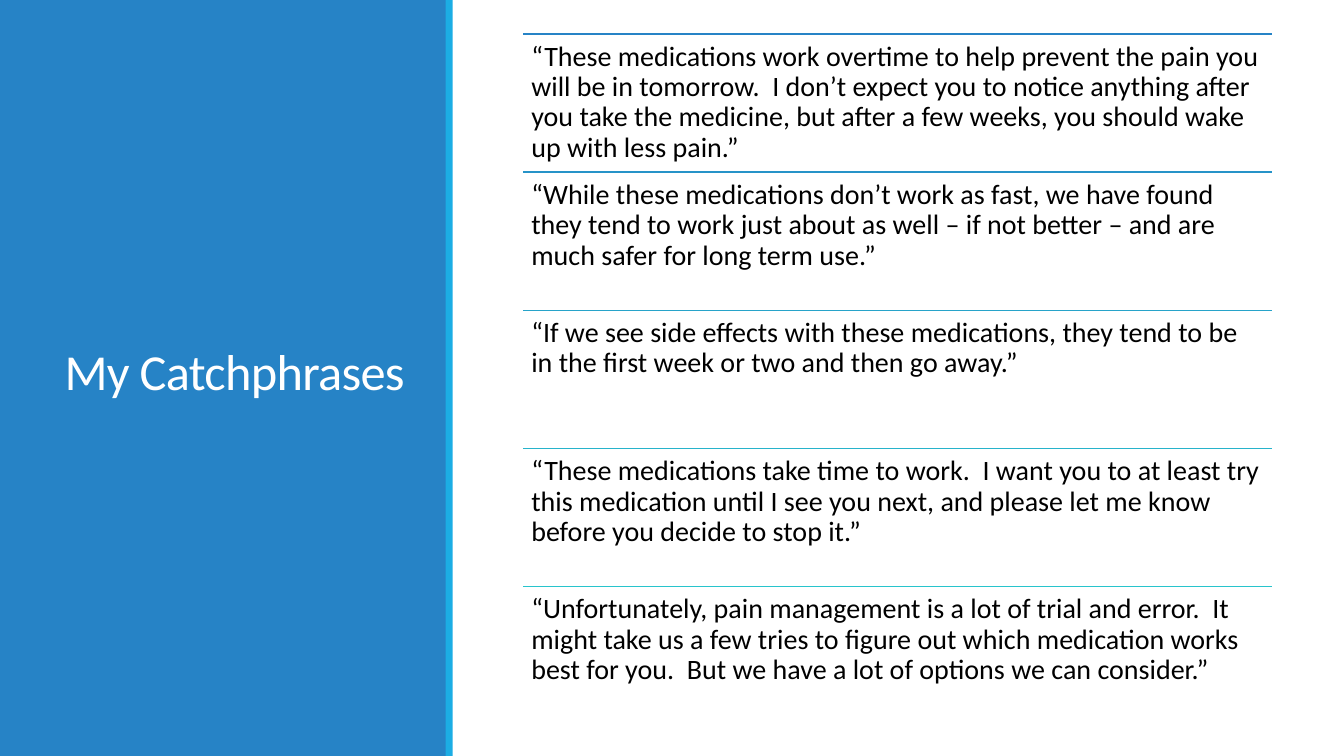
"""Build the "My Catchphrases" slide."""
from lxml.etree import SubElement
from pptx import Presentation
from pptx.dml.color import RGBColor
from pptx.enum.shapes import MSO_CONNECTOR, MSO_SHAPE
from pptx.enum.text import MSO_ANCHOR, MSO_AUTO_SIZE, PP_ALIGN
from pptx.oxml.ns import qn
from pptx.util import Inches, Pt

COLORS = {
    "panel": "2683C6",
    "stripe": "1CADE4",
    "title": "FFFFFF",
    "text": "000000",
}
CATCHPHRASES = [
    ("2683C6", "“These medications work overtime to help prevent the pain you will be in "
     "tomorrow.  I don’t expect you to notice anything after you take the medicine, "
     "but after a few weeks, you should wake up with less pain.”"),
    ("2693C8", "“While these medications don’t work as fast, we have found they tend to "
     "work just about as well – if not better – and are much safer for long term use.”"),
    ("27A3C9", "“If we see side effects with these medications, they tend to be in the "
     "first week or two and then go away.”"),
    ("27B3CB", "“These medications take time to work.  I want you to at least try this "
     "medication until I see you next, and please let me know before you decide to "
     "stop it.”"),
    ("28C4CC", "“Unfortunately, pain management is a lot of trial and error.  It might "
     "take us a few tries to figure out which medication works best for you.  But we "
     "have a lot of options we can consider.”"),
]
LEFT, TOP, WIDTH, ROW = 5.19, 0.34, 7.43, 1.37


def write_text(tf, text, size, color, spacing, anchor=MSO_ANCHOR.TOP,
               margins=(0.1, 0.05), tracking=None):
    """Fill a text frame with one formatted paragraph."""
    tf.word_wrap = True
    tf.auto_size = MSO_AUTO_SIZE.NONE
    tf.vertical_anchor = anchor
    tf.margin_left = tf.margin_right = Inches(margins[0])
    tf.margin_top = tf.margin_bottom = Inches(margins[1])
    p = tf.paragraphs[0]
    p.alignment = PP_ALIGN.LEFT
    p.line_spacing = spacing
    r = p.add_run()
    r.text = text
    r.font.size = Pt(size)
    r.font.name = "Calibri"
    r.font.color.rgb = RGBColor.from_string(color)
    if tracking is not None:
        r.font._element.set("spc", str(int(tracking * 100)))


def add_bar(s, left, width, color):
    """Add a full-height plain bar."""
    sp = s.shapes.add_shape(MSO_SHAPE.RECTANGLE, Inches(left), 0, Inches(width), Inches(7.5))
    sp.shadow.inherit = False
    sp.fill.solid()
    sp.fill.fore_color.rgb = RGBColor.from_string(color)
    sp.line.fill.background()
    return sp


def add_title(s, text):
    """Place and format the title placeholder."""
    sp = s.shapes.title
    sp.left, sp.top = Inches(0.54), Inches(0.57)
    sp.width, sp.height = Inches(3.66), Inches(6.31)
    write_text(sp.text_frame, text, 36, COLORS["title"], 0.85,
               anchor=MSO_ANCHOR.MIDDLE, tracking=-0.5)
    return sp


def add_rule(s, top, color):
    """Add a thin line across the quote column."""
    line = s.shapes.add_connector(MSO_CONNECTOR.STRAIGHT, Inches(LEFT), Inches(top),
                                  Inches(LEFT + WIDTH), Inches(top))
    line.line.color.rgb = RGBColor.from_string(color)
    line.line.width = Pt(1.25)
    SubElement(line.element.spPr, qn("a:effectLst"))


def add_quote(s, top, text):
    """Add one catchphrase under its line."""
    sp = s.shapes.add_textbox(Inches(LEFT), Inches(top), Inches(WIDTH), Inches(ROW))
    write_text(sp.text_frame, text, 20, COLORS["text"], 0.9, margins=(0.08, 0.08))


def main():
    """Build and save the slide."""
    prs = Presentation()
    prs.slide_width, prs.slide_height = Inches(13.33), Inches(7.5)
    s = prs.slides.add_slide(prs.slide_layouts[5])
    title = add_title(s, "My Catchphrases")
    panel = add_bar(s, 0, 4.43, COLORS["panel"])
    title.element.addprevious(panel.element)
    add_bar(s, 4.42, 0.07, COLORS["stripe"])
    for i, (color, text) in enumerate(CATCHPHRASES):
        top = TOP + i * ROW
        add_rule(s, top, color)
        add_quote(s, top, text)
    prs.save("out.pptx")


if __name__ == "__main__":
    main()
